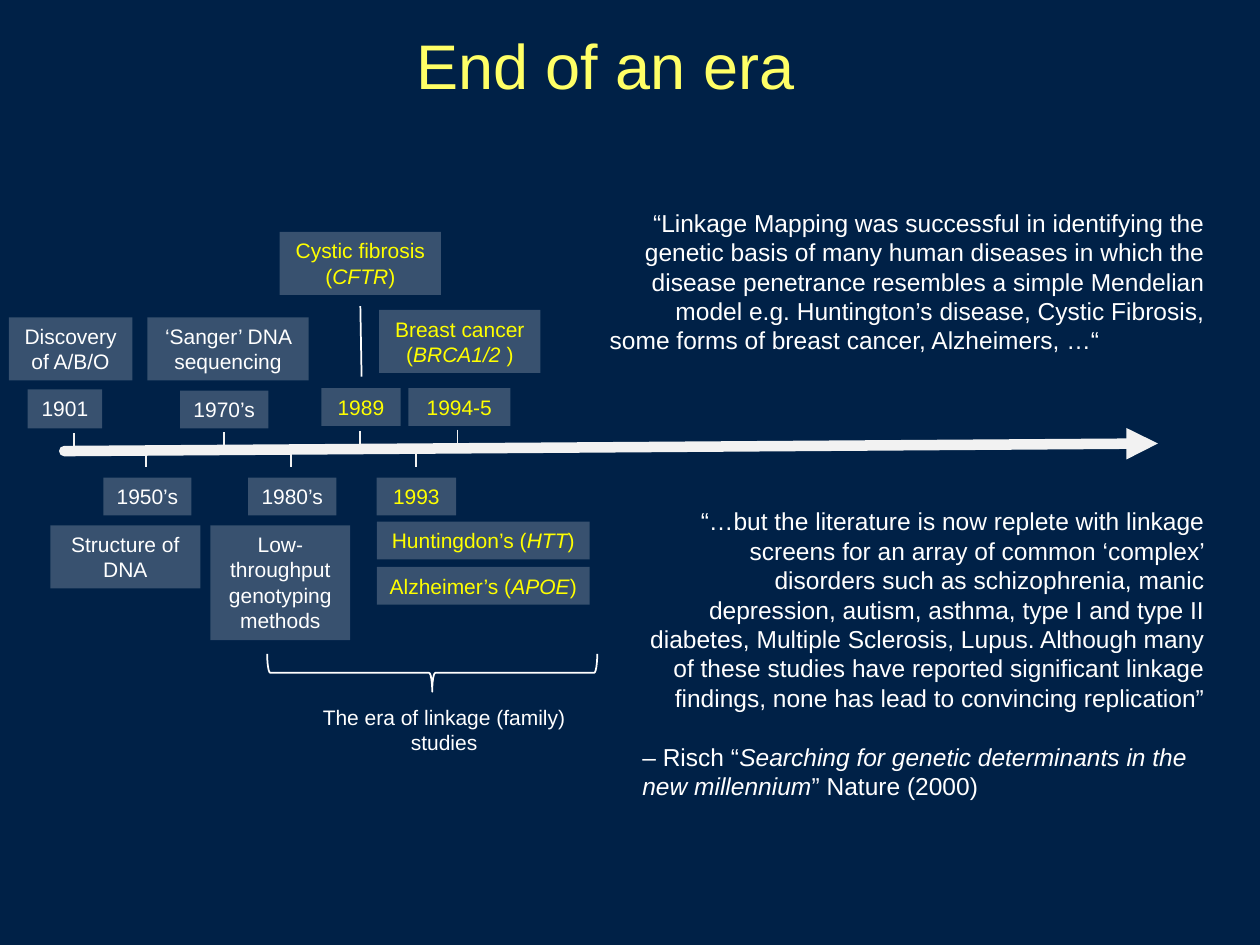
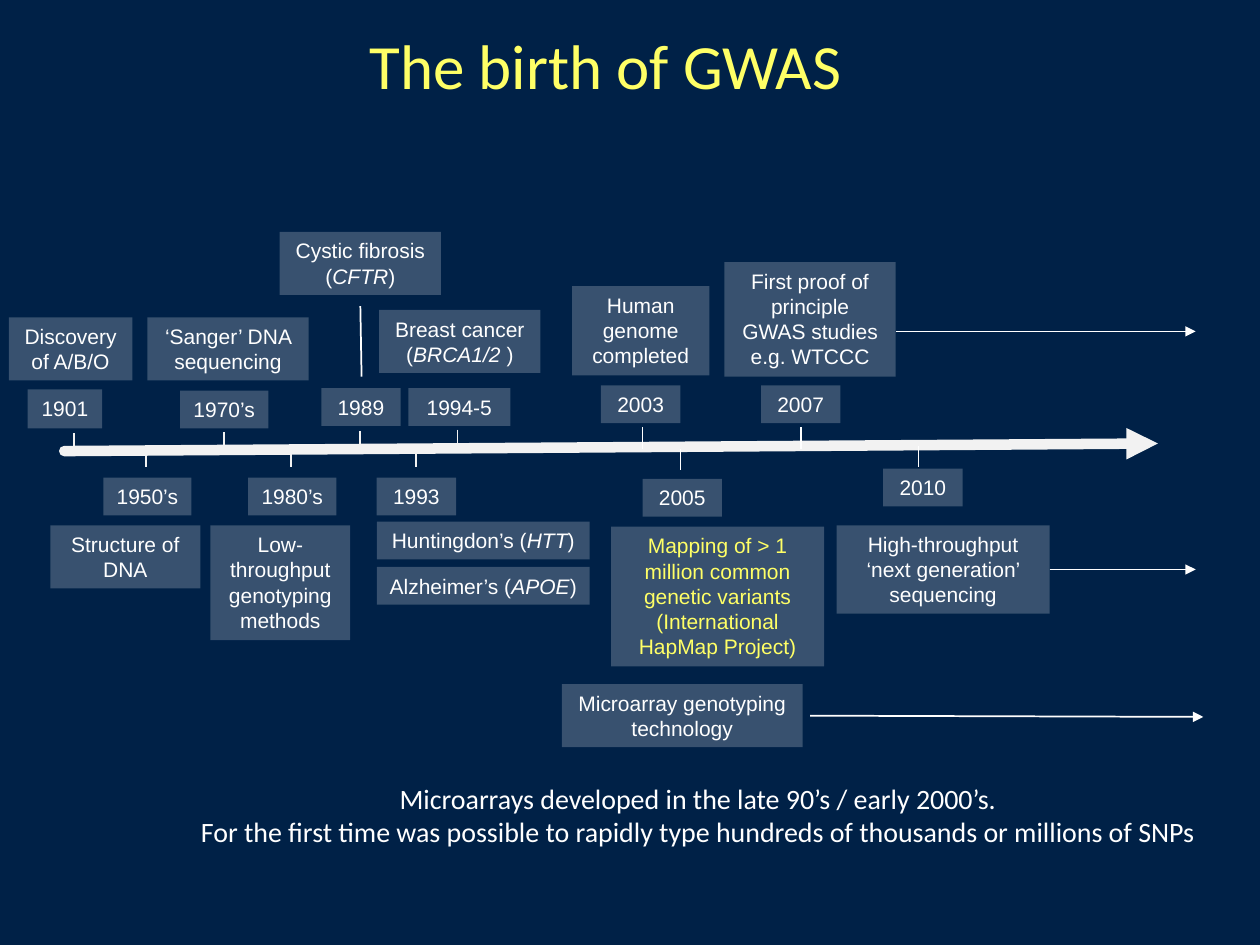
from dataclasses import dataclass

from lxml import etree
from pptx import Presentation
from pptx.dml.color import RGBColor
from pptx.enum import shapes, text
from pptx.oxml import ns
from pptx.util import Inches, Pt


@dataclass(frozen=True)
class Theme:
    navy: str = "002147"
    white: str = "FFFFFF"
    axis: str = "F2F2F2"
    title: str = "FFFF66"
    highlight: str = "FFFF00"
    box_alpha: int = 22
    body_font: str = "Arial"
    second_font: str = "Calibri"
    title_size: int = 36
    closing_size: int = 16
    quote_size: int = 14
    label_size: int = 12


theme = Theme()
LEFT, CENTER, RIGHT = (text.PP_ALIGN.LEFT, text.PP_ALIGN.CENTER,
                       text.PP_ALIGN.RIGHT)


def write(slide, words, at, size=theme.label_size, color=theme.white,
          font=theme.body_font, aligns=(CENTER,), boxed=False, middle=False,
          wrap=True, gap=0):
    """Place text; newlines part paragraphs and asterisks enclose italics."""
    place = [Inches(n) for n in at]
    if boxed:
        holder = slide.shapes.add_shape(shapes.MSO_SHAPE.RECTANGLE, *place)
        holder.shadow.inherit = False
        holder.line.fill.background()
        holder.fill.solid()
        holder.fill.fore_color.rgb = RGBColor.from_string(theme.white)
        tint = holder.fill._xPr.find(".//" + ns.qn("a:srgbClr"))
        etree.SubElement(tint, ns.qn("a:alpha"),
                         val=str(theme.box_alpha * 1000))
    else:
        holder = slide.shapes.add_textbox(*place)
    frame = holder.text_frame
    frame.word_wrap = wrap
    frame.vertical_anchor = (text.MSO_ANCHOR.MIDDLE if middle
                             else text.MSO_ANCHOR.TOP)
    for i, line in enumerate(words.split("\n")):
        paragraph = frame.add_paragraph() if i else frame.paragraphs[0]
        paragraph.alignment = aligns[min(i, len(aligns) - 1)]
        if i and gap:
            paragraph.space_before = Pt(gap)
        for j, part in enumerate(line.split("*")):
            run = paragraph.add_run()
            run.text = part
            run.font.size = Pt(size)
            run.font.name = font
            run.font.italic = j % 2 == 1
            run.font.color.rgb = RGBColor.from_string(color)
    return holder


def draw_line(slide, start, end, color=theme.white, width=1, arrow=False):
    line = slide.shapes.add_connector(
        shapes.MSO_CONNECTOR.STRAIGHT, *[Inches(n) for n in (*start, *end)])
    line.line.color.rgb = RGBColor.from_string(color)
    line.line.width = Pt(width)
    if arrow:
        etree.SubElement(line.line._get_or_add_ln(), ns.qn("a:tailEnd"),
                         type="triangle")
    etree.SubElement(line._element.spPr, ns.qn("a:effectLst"))
    return line


deck = Presentation()
deck.slide_width, deck.slide_height = Inches(10), Inches(7.5)

# Events on both timelines: words and place
early_events = [
    ("Discovery of A/B/O", (0.07, 2.52, 0.98, 0.5)),
    ("1901", (0.22, 3.09, 0.59, 0.31)),
    ("Structure of DNA", (0.4, 4.17, 1.19, 0.5)),
    ("1950’s", (0.82, 3.79, 0.7, 0.3)),
    ("‘Sanger’ DNA sequencing", (1.17, 2.52, 1.28, 0.5)),
    ("1970’s", (1.43, 3.1, 0.7, 0.3)),
    ("Low-throughput genotyping methods", (1.67, 4.17, 1.11, 0.91)),
    ("1980’s", (1.97, 3.79, 0.7, 0.3)),
]
linkage_events = [
    ("Cystic fibrosis (*CFTR*)", (2.22, 1.84, 1.28, 0.5)),
    ("1989", (2.55, 3.08, 0.63, 0.3)),
    ("1993", (2.99, 3.79, 0.63, 0.3)),
    ("Huntingdon’s (*HTT*)", (2.99, 4.14, 1.69, 0.3)),
    ("Alzheimer’s (*APOE*)", (2.99, 4.5, 1.69, 0.3)),
    ("Breast cancer (*BRCA1/2 *)", (3.01, 2.46, 1.28, 0.5)),
    ("1994-5", (3.24, 3.08, 0.81, 0.3)),
]
tick_length = 0.17
early_ticks = [(0.59, 3.44), (1.16, 3.54), (1.78, 3.43), (2.31, 3.54),
               (2.86, 3.42), (3.3, 3.54), (3.63, 3.41)]

# Shared part of both slides: background, title, timeline and early events
slides = []
for heading, heading_font, linkage_color in [
        ("End of an era", theme.body_font, theme.highlight),
        ("The birth of GWAS", theme.second_font, theme.white)]:
    slide = deck.slides.add_slide(deck.slide_layouts[6])
    slides.append(slide)
    slide.background.fill.solid()
    slide.background.fill.fore_color.rgb = RGBColor.from_string(theme.navy)
    write(slide, heading, (0.99, 0.14, 7.63, 0.74), size=theme.title_size,
          color=theme.title, font=heading_font, middle=True)
    timeline = draw_line(slide, (0.51, 3.58), (9.19, 3.52), theme.axis,
                         width=6, arrow=True)
    timeline.line._get_or_add_ln().set("cap", "rnd")
    for x, y in early_ticks:
        draw_line(slide, (x, y), (x, y + tick_length), theme.axis)
    draw_line(slide, (2.86, 2.43), (2.87, 2.99))
    for words, at in early_events:
        write(slide, words, at, boxed=True)
    for words, at in linkage_events:
        write(slide, words, at, color=linkage_color, boxed=True)

linkage, gwas = slides

# Slide 1: brace over the linkage era
brace = linkage.shapes.add_shape(
    shapes.MSO_SHAPE.RIGHT_BRACE,
    *[Inches(n) for n in (3.28, 4.03, 0.3, 2.62)])
brace.rotation = 90
brace.shadow.inherit = False
brace.fill.background()
brace.line.color.rgb = RGBColor.from_string(theme.white)
brace.line.width = Pt(1)
write(linkage, "The era of linkage (family) studies", (2.3, 5.54, 2.45, 0.5))

# Slide 1: quotations
write(linkage,
      "“Linkage Mapping was successful in identifying the genetic basis of "
      "many human diseases in which the disease penetrance resembles a simple "
      "Mendelian model e.g. Huntington’s disease, Cystic Fibrosis,\n"
      "some forms of breast cancer, Alzheimers, …“",
      (4.74, 1.6, 4.92, 1.51), size=theme.quote_size, aligns=(RIGHT, LEFT))
write(linkage,
      "“…but the literature is now replete with linkage screens for an array "
      "of common ‘complex’ disorders such as schizophrenia, manic depression, "
      "autism, asthma, type I and type II diabetes, Multiple Sclerosis, Lupus. "
      "Although many of these studies have reported significant linkage "
      "findings, none has lead to convincing replication”\n"
      "– Risch “*Searching for genetic determinants in the new millennium*” "
      "Nature (2000)",
      (5, 3.97, 4.66, 2.5), size=theme.quote_size, aligns=(RIGHT, LEFT),
      gap=17)

# Slide 2: events of the genome age
for words, at in [
        ("Human genome completed", (4.54, 2.27, 1.09, 0.71)),
        ("2003", (4.77, 3.06, 0.63, 0.3)),
        ("2005", (5.1, 3.8, 0.63, 0.3)),
        ("First proof of principle GWAS studies e.g. WTCCC",
         (5.75, 2.08, 1.36, 0.91)),
        ("2007", (6.04, 3.06, 0.63, 0.3)),
        ("Microarray genotyping technology", (4.46, 5.43, 1.91, 0.5)),
        ("2010", (7.01, 3.72, 0.63, 0.3))]:
    write(gwas, words, at, boxed=True)
write(gwas, "Mapping of > 1 million common genetic variants\n"
      "(International HapMap Project)", (4.85, 4.18, 1.69, 1.11),
      color=theme.title, boxed=True)
sequencing = write(gwas, "High-throughput ‘next generation’ sequencing",
                   (6.64, 4.17, 1.69, 0.7), boxed=True)
for x, y in [(5.1, 3.39), (5.4, 3.56), (6.36, 3.39), (7.29, 3.54)]:
    draw_line(gwas, (x, y), (x, y + tick_length))

# Slide 2: work that goes on
draw_line(gwas, (7.11, 2.63), (9.49, 2.63), arrow=True)
draw_line(gwas, (6.43, 5.68), (9.55, 5.69), arrow=True)
ongoing_sequencing = draw_line(gwas, (8.33, 4.52), (9.49, 4.52), arrow=True)
ongoing_sequencing.begin_connect(sequencing, 3)

# Slide 2: closing remark
write(gwas, "Microarrays developed in the late 90’s / early 2000’s.\n"
      "For the first time was possible to rapidly type hundreds of thousands "
      "or millions of SNPs", (1.4, 6.15, 8.28, 0.64),
      size=theme.closing_size, font=theme.second_font, wrap=False)

deck.save("out.pptx")
